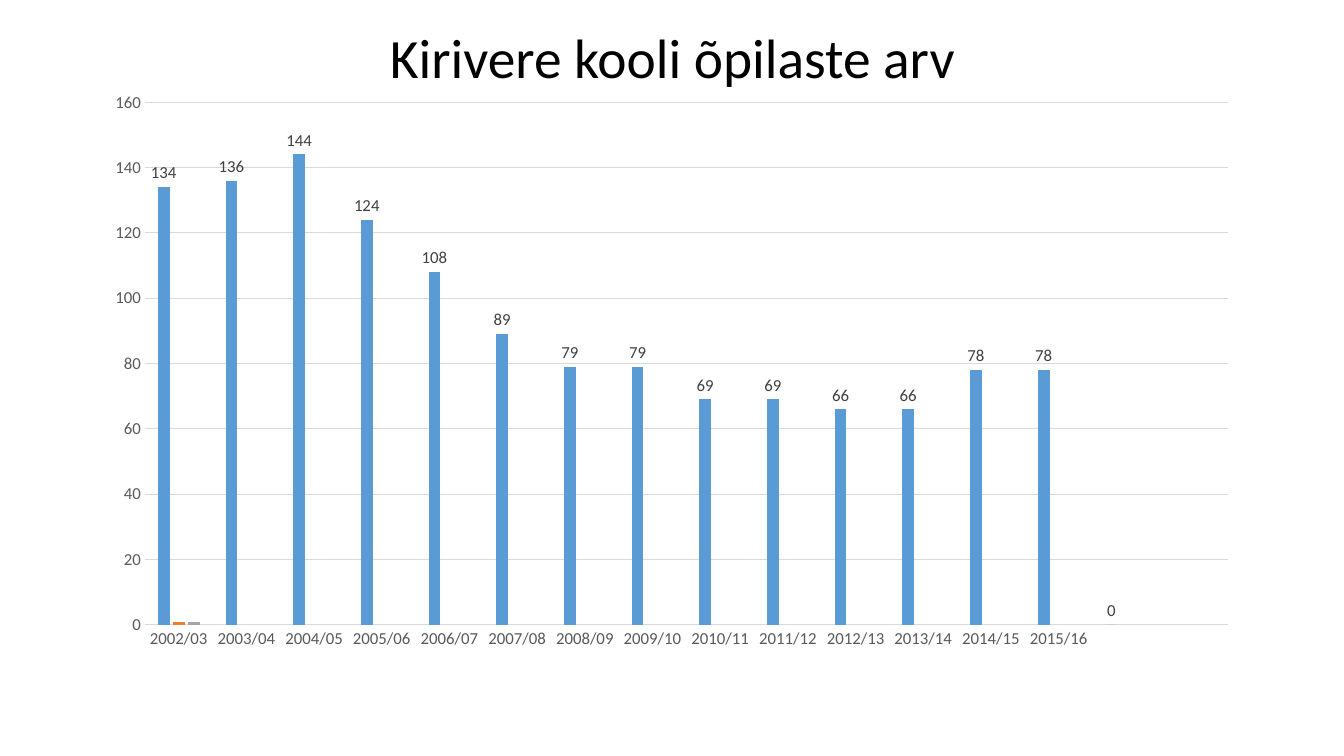
from lxml.etree import SubElement
from pptx import Presentation
from pptx.chart.data import CategoryChartData
from pptx.dml.color import RGBColor
from pptx.enum.chart import XL_CHART_TYPE, XL_LABEL_POSITION, XL_TICK_MARK
from pptx.enum.text import MSO_ANCHOR, PP_ALIGN
from pptx.oxml.ns import qn
from pptx.util import Inches, Pt


def tint(hue):
    return RGBColor.from_string(hue)


def style(font, size, hue):
    for key, val in {"name": "Calibri", "size": Pt(size), "bold": False}.items():
        setattr(font, key, val)
    font.color.rgb = tint(hue)


deck = Presentation()
deck.slide_width, deck.slide_height = Inches(13.33), Inches(7.5)
slide = deck.slides.add_slide(deck.slide_layouts[6])
left, wide = Inches(0.92), Inches(11.5)

# Title
box = slide.shapes.add_textbox(left, Inches(0.4), wide, Inches(0.4))
frame = box.text_frame
for key, val in {"word_wrap": True, "vertical_anchor": MSO_ANCHOR.MIDDLE}.items():
    setattr(frame, key, val)
para = frame.paragraphs[0]
for key, val in {"text": "Kirivere kooli õpilaste arv", "alignment": PP_ALIGN.CENTER,
                 "line_spacing": 0.9}.items():
    setattr(para, key, val)
style(para.runs[0].font, 39.6, "000000")

# Pupils per school year, with two unnamed slots at the end
pupils = [134, 136, 144, 124, 108, 89, 79, 79, 69, 69, 66, 66, 78, 78, 0, None]
data = CategoryChartData()
data.categories = [f"{year}/{(year + 1) % 100:02}" for year in range(2002, 2016)] + ["", ""]
for name, vals in (("Series 1", pupils), ("Series 2", [1]), ("Series 3", [1])):
    data.add_series(name, vals)
chart = slide.shapes.add_chart(XL_CHART_TYPE.COLUMN_CLUSTERED, left, Inches(0.8),
                               wide, Inches(5.96), data).chart
chart.has_title = chart.has_legend = False
style(chart.font, 10, "000000")

# Bars
plot = chart.plots[0]
for key, val in {"gap_width": 219, "overlap": -27, "vary_by_categories": False}.items():
    setattr(plot, key, val)
for bars, hue in zip(plot.series, ("5B9BD5", "ED7D31", "A5A5A5")):
    bars.format.fill.solid()
    bars.format.fill.fore_color.rgb = tint(hue)
labels = plot.series[0].data_labels
for key, val in {"show_value": True, "position": XL_LABEL_POSITION.OUTSIDE_END}.items():
    setattr(labels, key, val)
style(labels.font, 12, "404040")

# Axes and grid
years, count = chart.category_axis, chart.value_axis
for axis in (years, count):
    axis.major_tick_mark = axis.minor_tick_mark = XL_TICK_MARK.NONE
    style(axis.tick_labels.font, 12, "595959")
for key, val in {"minimum_scale": 0, "maximum_scale": 160, "major_unit": 20,
                 "has_major_gridlines": True}.items():
    setattr(count, key, val)
count.format.line.fill.background()
for line in (years.format.line, count.major_gridlines.format.line):
    line.color.rgb = tint("D9D9D9")
    line.width = Pt(0.75)

# Place of the plot as shares of the chart
area = chart.element.find(".//" + qn("c:plotArea"))
for old in area.findall(qn("c:layout")):
    area.remove(old)
layout = SubElement(area, qn("c:layout"))
area.insert(0, layout)
manual = SubElement(layout, qn("c:manualLayout"))
for tag, val in {"layoutTarget": "inner", "xMode": "edge", "yMode": "edge",
                 "x": 0.045, "y": 0.036, "w": 0.934, "h": 0.87}.items():
    SubElement(manual, qn("c:" + tag)).set("val", str(val))

deck.save("out.pptx")
